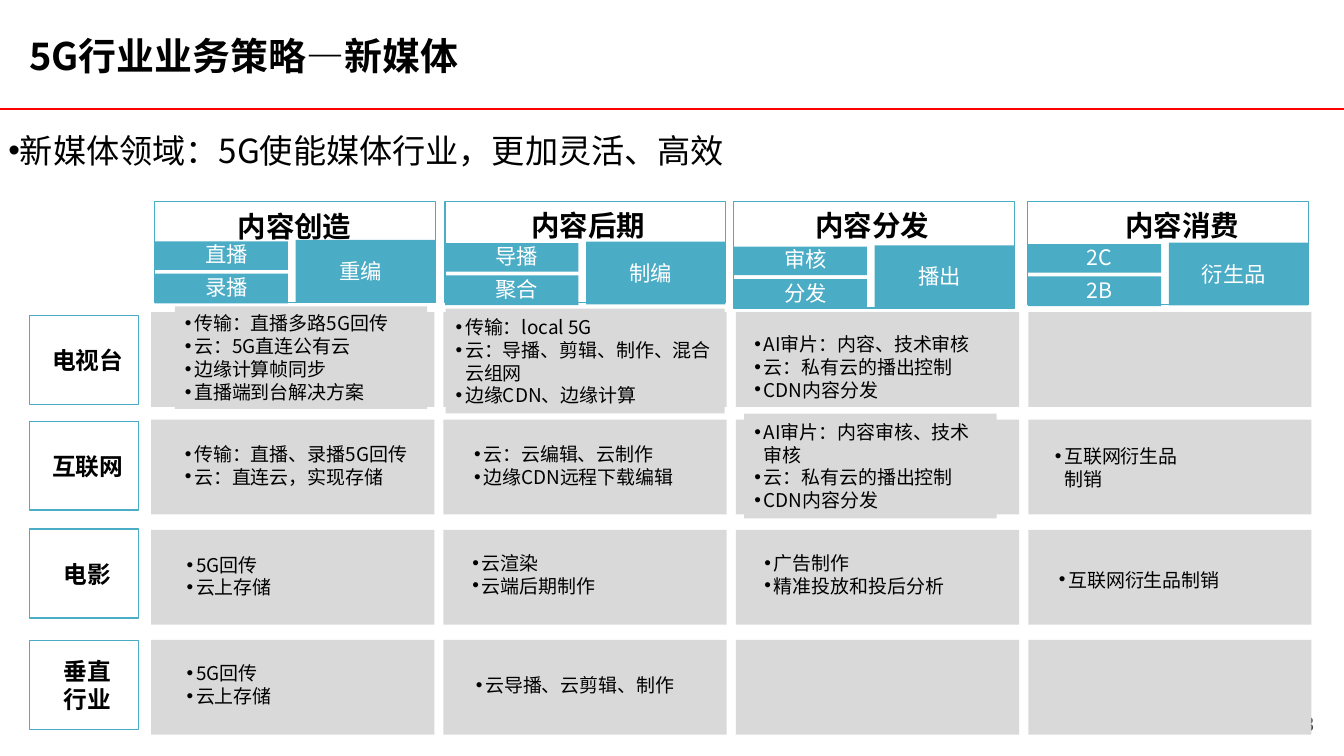
from dataclasses import dataclass

from lxml.etree import SubElement
from pptx import Presentation
from pptx.dml.color import RGBColor as RGB
from pptx.enum.shapes import MSO_CONNECTOR as CONN, MSO_SHAPE as SHAPE
from pptx.enum.text import MSO_ANCHOR as ANCHOR, MSO_AUTO_SIZE as AUTO, PP_ALIGN as ALIGN
from pptx.oxml.ns import qn
from pptx.util import Pt


@dataclass(frozen=True)
class Theme:
    font: str = "Noto Sans CJK SC"
    number_font: str = "Arial"
    ink: RGB = RGB(0, 0, 0)
    white: RGB = RGB(255, 255, 255)
    teal: RGB = RGB(0x4B, 0xAC, 0xC6)
    grey: RGB = RGB(0xD9, 0xD9, 0xD9)
    red: RGB = RGB(255, 0, 0)
    number: RGB = RGB(0x40, 0x40, 0x40)
    title_size: float = 32
    lead_size: float = 28
    stage_size: float = 24
    row_size: float = 20
    chip_size: float = 18
    note_size: float = 16
    number_size: float = 17


THEME = Theme()


def write(tf, text, *, size, color=THEME.ink, font=THEME.font, bold=False,
          align=ALIGN.LEFT, anchor=ANCHOR.MIDDLE, inset=(0, 0, 0, 0),
          spacing=None, bullet=False):
    """Fill a text frame, one paragraph for each line of text."""
    tf.auto_size = AUTO.NONE
    tf.word_wrap = True
    tf.vertical_anchor = anchor
    tf.margin_left, tf.margin_top, tf.margin_right, tf.margin_bottom = map(Pt, inset)
    for i, line in enumerate(text.split("\n")):
        p = tf.paragraphs[0] if i == 0 else tf.add_paragraph()
        p.alignment = align
        if spacing:
            p.line_spacing = spacing
        if bullet:
            pPr = p._p.get_or_add_pPr()
            pPr.set("marL", str(Pt(8)))
            pPr.set("indent", str(-Pt(8)))
            SubElement(pPr, qn("a:buFont")).set("typeface", "Arial")
            SubElement(pPr, qn("a:buChar")).set("char", "•")
        r = p.add_run()
        r.text = line
        r.font.size, r.font.bold, r.font.name = Pt(size), bold, font
        r.font.color.rgb = color
        SubElement(r._r.get_or_add_rPr(), qn("a:ea")).set("typeface", font)


class SlideBuilder:
    def __init__(self, slide, theme):
        self.s, self.t = slide, theme

    def title(self, x, y, w, h, text):
        sp = self.s.shapes.title
        sp.left, sp.top, sp.width, sp.height = map(Pt, (x, y, w, h))
        write(sp.text_frame, text, size=self.t.title_size, bold=True, spacing=0.9)

    def text(self, x, y, w, h, text, **style):
        sp = self.s.shapes.add_textbox(*map(Pt, (x, y, w, h)))
        write(sp.text_frame, text, **style)

    def rect(self, x, y, w, h, fill=None, line=None):
        sp = self.s.shapes.add_shape(SHAPE.RECTANGLE, *map(Pt, (x, y, w, h)))
        sp.shadow.inherit = False
        if fill is None:
            sp.fill.background()
        else:
            sp.fill.solid()
            sp.fill.fore_color.rgb = fill
        if line is None:
            sp.line.fill.background()
        else:
            sp.line.color.rgb, sp.line.width = line, Pt(1)
        return sp

    def rule(self, x1, y1, x2, y2):
        c = self.s.shapes.add_connector(CONN.STRAIGHT, *map(Pt, (x1, y1, x2, y2)))
        c.line.color.rgb, c.line.width = self.t.red, Pt(1)
        SubElement(c._element.spPr, qn("a:effectLst"))

    def chip(self, x, y, w, h, text, inset):
        sp = self.rect(x, y, w, h, fill=self.t.teal)
        write(sp.text_frame, text, size=self.t.chip_size, color=self.t.white,
              align=ALIGN.CENTER, inset=inset)

    def stage(self, x, chip_y, frame_h, name, name_x, name_y, chips):
        """Column header: a frame, its name, two small chips and a tall one."""
        upper, lower, tall = chips
        self.rect(x, 170, 237, frame_h, line=self.t.teal)
        self.text(name_x - 70, name_y, 140, 50, name, size=self.t.stage_size,
                  bold=True, align=ALIGN.CENTER, anchor=ANCHOR.TOP,
                  inset=(8.5, 4.5, 8.5, 4.5), spacing=Pt(40.6))
        self.chip(x, chip_y, 112.5, 24, upper, (8.5, 0, 0, 3))
        self.chip(x, chip_y + 27.3, 112.5, 25, lower, (8.5, 0, 0, 2))
        self.chip(x + 119, chip_y - 1.2, 117.5, 53, tall, (0, 0, 8, 1))

    def row_label(self, y, text):
        sp = self.rect(25, y, 92, 75, line=self.t.teal)
        write(sp.text_frame, text, size=self.t.row_size, bold=True,
              align=ALIGN.CENTER, inset=(6, 0, 0, 0))

    def note(self, x, y, w, h, text):
        sp = self.rect(x, y, w, h, fill=self.t.grey)
        write(sp.text_frame, text, size=self.t.note_size, bullet=True,
              inset=(8.5, 4.5, 8.5, 4.5))


# x, chip top, frame height, name, name centre, name top, chips
STAGES = [
    (130.5, 203.7, 85.5, "内容创造", 248.5, 160, ("直播", "录播", "重编")),
    (375.5, 205.2, 85.5, "内容后期", 496.5, 159, ("导播", "聚合", "制编")),
    (619, 208.2, 90, "内容分发", 736, 159, ("审核", "分发", "播出")),
    (867.3, 206, 87, "内容消费", 997.5, 159, ("2C", "2B", "衍生品")),
]

# label top, cell top, label
ROWS = [
    (266.5, 263.5, "电视台"),
    (355.5, 354.2, "互联网"),
    (446.5, 447.1, "电影"),
    (540.5, 540, "垂直\n行业"),
]

# x, y, width, height, text
NOTES = [
    (147.5, 258.5, 213, 86.5, "传输：直播多路5G回传\n云：5G直连公有云\n边缘计算帧同步\n直播端到台解决方案"),
    (147.5, 368, 213, 49, "传输：直播、录播5G回传\n云：直连云，实现存储"),
    (149, 461.5, 213, 49, "5G回传\n云上存储"),
    (149, 553, 213, 49, "5G回传\n云上存储"),
    (376, 260.5, 235.5, 88.5, "传输：local 5G\n云：导播、剪辑、制作、混合云组网\n边缘CDN、边缘计算"),
    (391.5, 368.5, 213, 49, "云：云编辑、云制作\n边缘CDN远程下载编辑"),
    (390, 460, 213, 49, "云渲染\n云端后期制作"),
    (393, 564, 213, 28, "云导播、云剪辑、制作"),
    (628, 276, 228, 67, "AI审片：内容、技术审核\n云：私有云的播出控制\nCDN内容分发"),
    (628, 349, 213, 88.5, "AI审片：内容审核、技术审核\n云：私有云的播出控制\nCDN内容分发"),
    (636.5, 460, 213, 49, "广告制作\n精准投放和投后分析"),
    (881.5, 370, 135.5, 49, "互联网衍生品制销"),
    (885, 475, 213, 28, "互联网衍生品制销"),
]


def main():
    prs = Presentation()
    prs.slide_width, prs.slide_height = Pt(1134), Pt(638)
    b = SlideBuilder(prs.slides.add_slide(prs.slide_layouts[5]), THEME)

    # Title, rule, page number and lead line
    b.title(24.5, 32, 998.5, 35, "5G行业业务策略—新媒体")
    b.rule(0, 92, 1134, 92)
    b.text(1078, 592.5, 42.5, 36, "13", size=THEME.number_size, color=THEME.number,
           font=THEME.number_font, align=ALIGN.CENTER, inset=(6.5, 3, 6.5, 3))
    b.text(0, 110, 998.5, 42.5, "新媒体领域：5G使能媒体行业，更加灵活、高效",
           size=THEME.lead_size, anchor=ANCHOR.TOP, spacing=0.9, bullet=True,
           inset=(7.2, 3.6, 7.2, 3.6))

    # Column headers
    for stage in STAGES:
        b.stage(*stage)

    # Row labels and grey cells
    for label_y, cell_y, label in ROWS:
        b.row_label(label_y, label)
        for col in range(len(STAGES)):
            b.rect(127.5 + 246.7 * col, cell_y, 239, 80, fill=THEME.grey)

    # Notes on the cells
    for note in NOTES:
        b.note(*note)

    prs.save("out.pptx")


if __name__ == "__main__":
    main()
